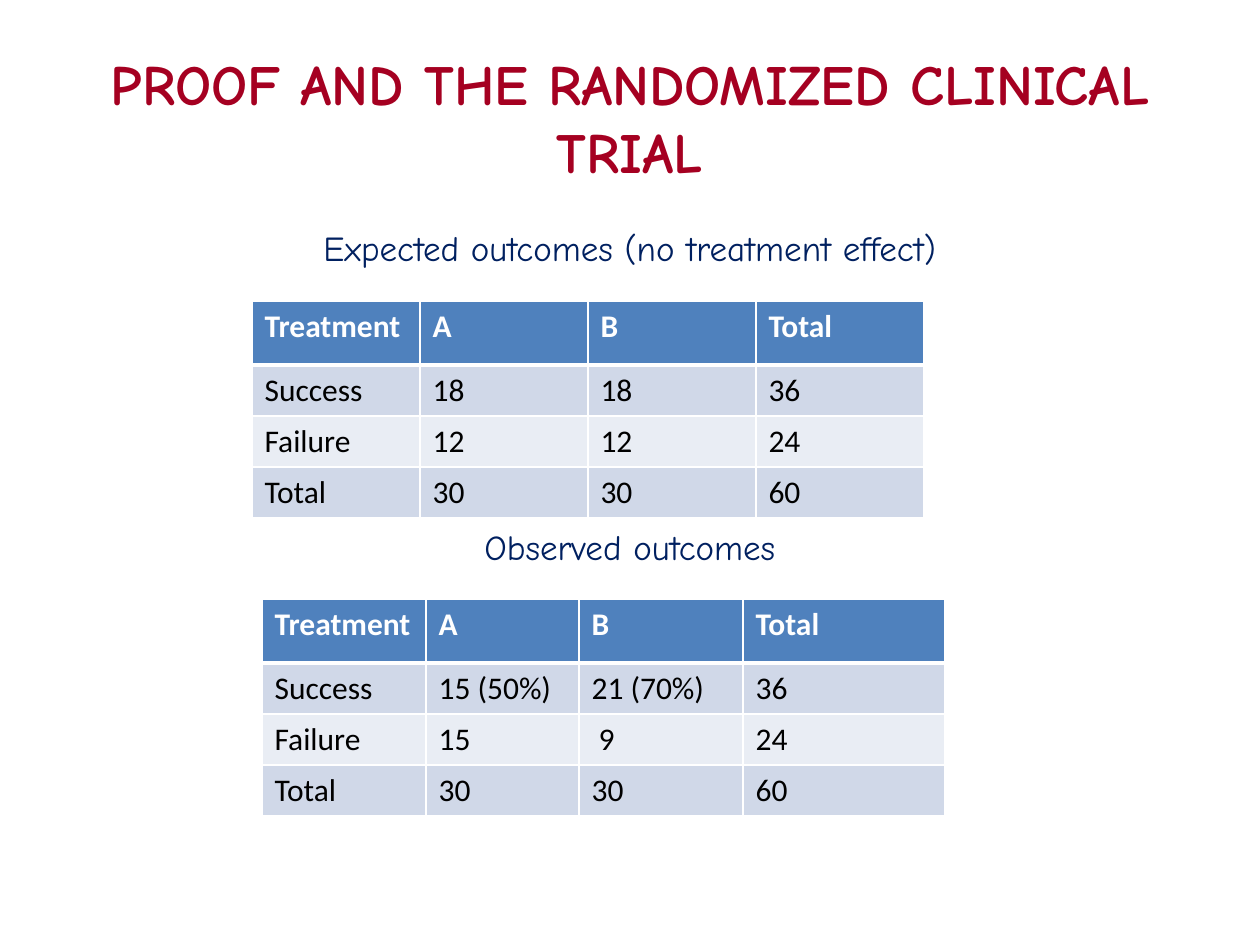
"""Build a slide comparing expected and observed outcomes of a randomized trial."""
import dataclasses

import lxml.etree
import pptx
import pptx.dml.color
import pptx.enum.text
import pptx.oxml.ns
import pptx.util


@dataclasses.dataclass(frozen=True)
class Theme:
    display_font: str = "Comic Neue"
    table_font: str = "Calibri"
    title: str = "A50021"
    caption: str = "002060"
    header: str = "4F81BD"
    header_text: str = "FFFFFF"
    body_text: str = "000000"
    bands: tuple = ("D0D8E8", "E9EDF4")
    border: str = "FFFFFF"
    title_size: float = 32.4
    caption_size: float = 20
    table_size: float = 18
    thin: float = 1
    thick: float = 3


THEME = Theme()
PX_PER_INCH = 126
HEADER_HEIGHT, ROW_HEIGHT = 64, 51

EXPECTED = [
    ("Treatment", "A", "B", "Total"),
    ("Success", "18", "18", "36"),
    ("Failure", "12", "12", "24"),
    ("Total", "30", "30", "60"),
]
OBSERVED = [
    ("Treatment", "A", "B", "Total"),
    ("Success", "15 (50%)", "21 (70%)", "36"),
    ("Failure", "15", " 9", "24"),
    ("Total", "30", "30", "60"),
]


def px(length):
    return pptx.util.Emu(round(length * 914400 / PX_PER_INCH))


def rgb(code):
    return pptx.dml.color.RGBColor.from_string(code)


def style_text(paragraph, font_name, size, color, bold=False):
    for run in paragraph.runs:
        run.font.name = font_name
        run.font.size = pptx.util.Pt(size)
        run.font.color.rgb = rgb(color)
        run.font.bold = bold


def add_heading(slide, text, top, height, size, color, bold=False):
    heading = slide.shapes.add_textbox(px(63), px(top), px(1134), px(height))
    frame = heading.text_frame
    frame.word_wrap = True
    frame.vertical_anchor = pptx.enum.text.MSO_ANCHOR.MIDDLE
    frame.text = text
    paragraph = frame.paragraphs[0]
    paragraph.alignment = pptx.enum.text.PP_ALIGN.CENTER
    style_text(paragraph, THEME.display_font, size, color, bold)


def add_borders(cell, top, bottom):
    properties = cell._tc.get_or_add_tcPr()
    qn = pptx.oxml.ns.qn
    sides = {"L": THEME.thin, "R": THEME.thin, "T": top, "B": bottom}
    for side, width in sides.items():
        line = lxml.etree.SubElement(
            properties, qn(f"a:ln{side}"), w=str(pptx.util.Pt(width)))
        fill = lxml.etree.SubElement(line, qn("a:solidFill"))
        lxml.etree.SubElement(fill, qn("a:srgbClr"), val=THEME.border)


def fill_cell(cell, text, row):
    is_header = row == 0
    cell.text_frame.text = text
    style_text(cell.text_frame.paragraphs[0], THEME.table_font, THEME.table_size,
               THEME.header_text if is_header else THEME.body_text, is_header)
    add_borders(cell,
                top=THEME.thick if row == 1 else THEME.thin,
                bottom=THEME.thick if is_header else THEME.thin)
    cell.fill.solid()
    band = THEME.bands[(row - 1) % len(THEME.bands)]
    cell.fill.fore_color.rgb = rgb(THEME.header if is_header else band)


def add_outcome_table(slide, outcomes, left, top, widths):
    heights = [HEADER_HEIGHT] + [ROW_HEIGHT] * (len(outcomes) - 1)
    table = slide.shapes.add_table(
        len(outcomes), len(widths), px(left), px(top),
        px(sum(widths)), px(sum(heights))).table
    for column, width in zip(table.columns, widths):
        column.width = px(width)
    for row, (values, height) in enumerate(zip(outcomes, heights)):
        table.rows[row].height = px(height)
        for column, value in enumerate(values):
            fill_cell(table.cell(row, column), value, row)


def main():
    presentation = pptx.Presentation()
    presentation.slide_width = px(1260)
    presentation.slide_height = px(945)
    slide = presentation.slides.add_slide(presentation.slide_layouts[6])

    add_heading(slide, "PROOF AND THE RANDOMIZED CLINICAL TRIAL", 38, 158,
                THEME.title_size, THEME.title, bold=True)
    add_heading(slide, "Expected outcomes (no treatment effect)", 220, 54,
                THEME.caption_size, THEME.caption)
    add_heading(slide, "Observed outcomes", 519, 54,
                THEME.caption_size, THEME.caption)
    add_outcome_table(slide, OBSERVED, 262, 599, [164, 153, 164, 202])
    add_outcome_table(slide, EXPECTED, 252, 301, [168] * 4)

    presentation.save("out.pptx")


if __name__ == "__main__":
    main()
